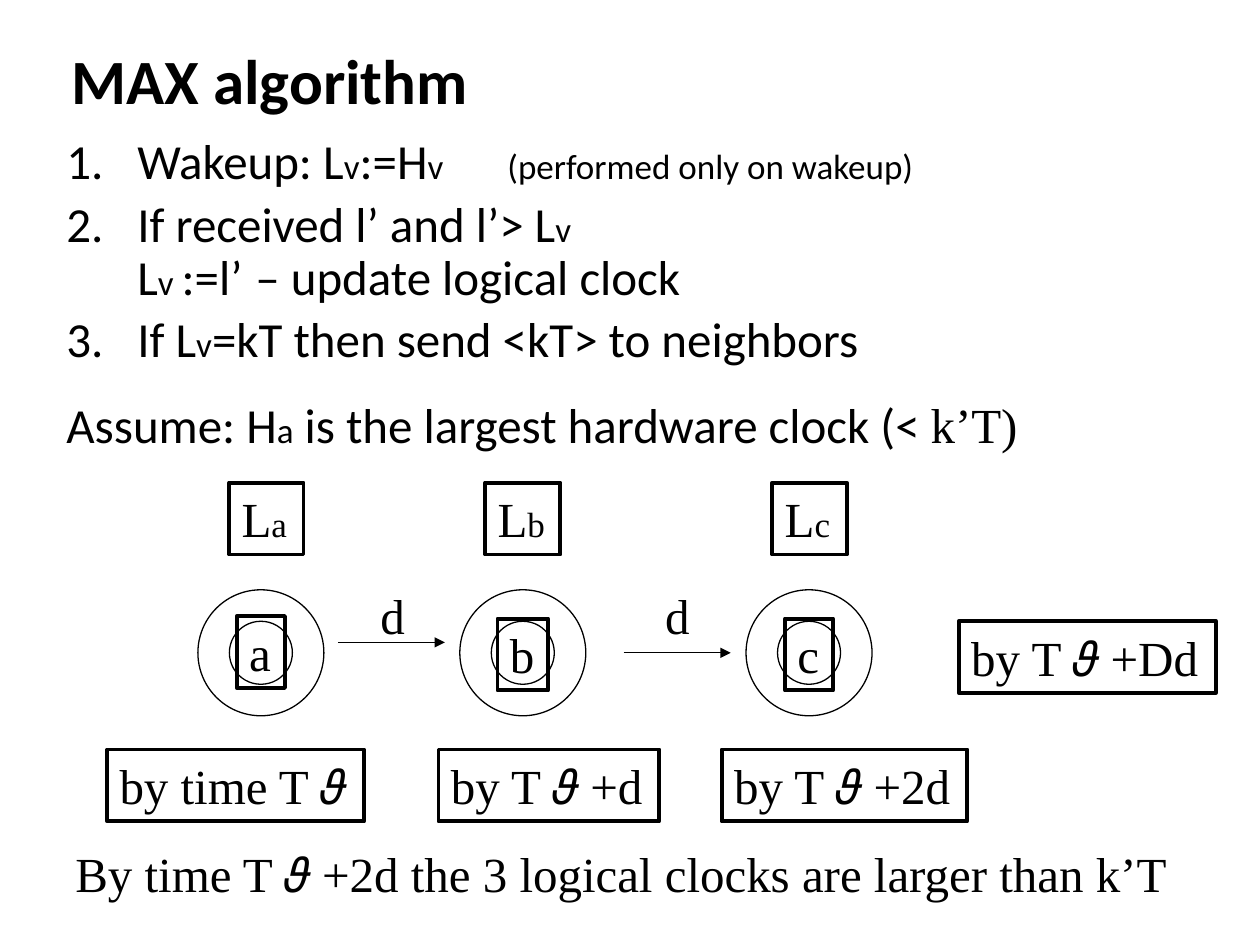
from lxml.etree import SubElement
from pptx import Presentation
from pptx.dml.color import RGBColor
from pptx.enum.shapes import MSO_CONNECTOR, MSO_SHAPE as Shape
from pptx.enum.text import MSO_ANCHOR as Anchor, MSO_AUTO_SIZE as AutoSize, PP_ALIGN as Align
from pptx.oxml.ns import qn
from pptx.util import Cm, Pt

COLORS = {"ink": "000000"}
SANS, SERIF = "Calibri", "Times New Roman"
THETA = " 𝜗 "


def add_span(para, text, size=28, font=SERIF, bold=False, color="ink"):
    span = para.add_run()
    span.text = text
    span.font.size = Pt(size)
    span.font.name = font
    span.font.bold = bold
    span.font.color.rgb = RGBColor.from_string(COLORS[color])


def add_subscripted(para, *parts, font=SERIF):
    """Alternate normal text and small subscript text."""
    for index, part in enumerate(parts):
        add_span(para, part, size=20 if index % 2 else 28, font=font)


def add_theta_text(para, before, after=""):
    add_span(para, before)
    add_span(para, THETA if after else THETA.rstrip(), font=SANS)
    if after:
        add_span(para, after)


class SlideBuilder:
    thin, thick = Pt(0.75), Pt(2.25)
    line_height = 1.45

    def __init__(self, slide):
        self.shapes = slide.shapes

    def outline(self, shape, width):
        shape.shadow.inherit = False
        shape.fill.background()
        shape.line.color.rgb = RGBColor.from_string(COLORS["ink"])
        shape.line.width = width

    def text_box(self, left, top, width, height):
        box = self.shapes.add_textbox(Cm(left), Cm(top), Cm(width), Cm(height))
        box.text_frame.word_wrap = True
        return box.text_frame

    def line_of_text(self, left, top, width):
        """Add a one-line text box and return its paragraph."""
        frame = self.text_box(left, top, width, self.line_height)
        return self.fit(frame)

    def framed_line(self, left, top, width):
        """Add a one-line outlined box and return its paragraph."""
        box = self.shapes.add_shape(
            Shape.RECTANGLE, Cm(left), Cm(top), Cm(width), Cm(self.line_height))
        self.outline(box, self.thick)
        return self.fit(box.text_frame)

    def fit(self, frame):
        frame.word_wrap = False
        frame.auto_size = AutoSize.SHAPE_TO_FIT_TEXT
        frame.vertical_anchor = Anchor.TOP
        para = frame.paragraphs[0]
        para.alignment = Align.LEFT
        return para

    def ring(self, center, top, size=2.54):
        ring = self.shapes.add_shape(
            Shape.DONUT, Cm(center - size / 2), Cm(top), Cm(size), Cm(size))
        self.outline(ring, self.thin)

    def arrow(self, left, y, length=2.16):
        arrow = self.shapes.add_connector(
            MSO_CONNECTOR.STRAIGHT, Cm(left), Cm(y), Cm(left + length), Cm(y))
        arrow.line.color.rgb = RGBColor.from_string(COLORS["ink"])
        arrow.line.width = self.thin
        properties = arrow._element.spPr
        SubElement(properties.find(qn("a:ln")), qn("a:tailEnd"), type="triangle")
        SubElement(properties, qn("a:effectLst"))

    def list_paragraph(self, frame, space_before=5.6, numbered=True):
        first = not frame.paragraphs[0].runs
        para = frame.paragraphs[0] if first else frame.add_paragraph()
        para.line_spacing = 0.9
        para.space_before = Pt(0 if first else space_before)
        if numbered:
            properties = para._p.get_or_add_pPr()
            properties.set("marL", str(Cm(1.43)))
            properties.set("indent", str(-Cm(1.43)))
            SubElement(properties, qn("a:buFont"), typeface=SANS)
            SubElement(properties, qn("a:buAutoNum"), type="arabicPeriod")
        return para


def add_algorithm(builder):
    title = builder.text_box(1.19, 0.64, 23.34, 1.9)
    title.vertical_anchor = Anchor.MIDDLE
    add_span(title.paragraphs[0], "MAX algorithm", size=36, font=SANS, bold=True)

    steps = builder.text_box(1.09, 2.64, 23.01, 6.35)
    wakeup = builder.list_paragraph(steps)
    add_subscripted(wakeup, "Wakeup: L", "v", ":=H",
                    "v \t(performed only on wakeup)", font=SANS)
    receive = builder.list_paragraph(steps)
    add_subscripted(receive, "If received l’ and l’> L", "v", font=SANS)
    receive.add_line_break()
    add_subscripted(receive, "L", "v ", ":=l’ \t– update logical clock", font=SANS)
    send = builder.list_paragraph(steps)
    add_subscripted(send, "If L", "v", "=kT then send <kT> to neighbors", font=SANS)
    assume = builder.list_paragraph(steps, space_before=18.5, numbered=False)
    add_subscripted(assume, "Assume: H", "a", " is the largest hardware clock (< ", font=SANS)
    add_span(assume, "k’T)")


def add_network(builder):
    # name, ring center, clock left and width, name top and width
    nodes = [
        ("a", 5.26, 4.62, 1.5, 12.42, 0.97),
        ("b", 10.54, 9.78, 1.52, 12.47, 1.02),
        ("c", 16.31, 15.57, 1.5, 12.47, 0.97),
    ]
    for name, center, clock_left, clock_width, name_top, name_width in nodes:
        builder.ring(center, 11.89)
        add_span(builder.framed_line(center - name_width / 2, name_top, name_width), name)
        add_subscripted(builder.framed_line(clock_left, 9.73, clock_width), "L", name)

    for arrow_left, arrow_y, delay_left in [(6.81, 12.95, 7.42), (12.57, 13.16, 13.16)]:
        builder.arrow(arrow_left, arrow_y)
        add_span(builder.line_of_text(delay_left, 11.68, 1.02), "d")


def add_bounds(builder):
    bounds = [
        (2.16, 15.11, 5.18, "by time T", ""),
        (8.84, 15.11, 4.45, "by T", "+d"),
        (14.55, 15.11, 4.95, "by T", "+2d"),
        (19.33, 12.52, 5.18, "by T", "+Dd"),
    ]
    for left, top, width, before, after in bounds:
        add_theta_text(builder.framed_line(left, top, width), before, after)
    add_theta_text(builder.line_of_text(1.27, 16.87, 23.01), "By time T",
                   "+2d the 3 logical clocks are larger than k’T")


def main():
    deck = Presentation()
    deck.slide_width, deck.slide_height = Cm(25.4), Cm(19.05)
    builder = SlideBuilder(deck.slides.add_slide(deck.slide_layouts[6]))
    add_algorithm(builder)
    add_network(builder)
    add_bounds(builder)
    deck.save("out.pptx")


if __name__ == "__main__":
    main()
